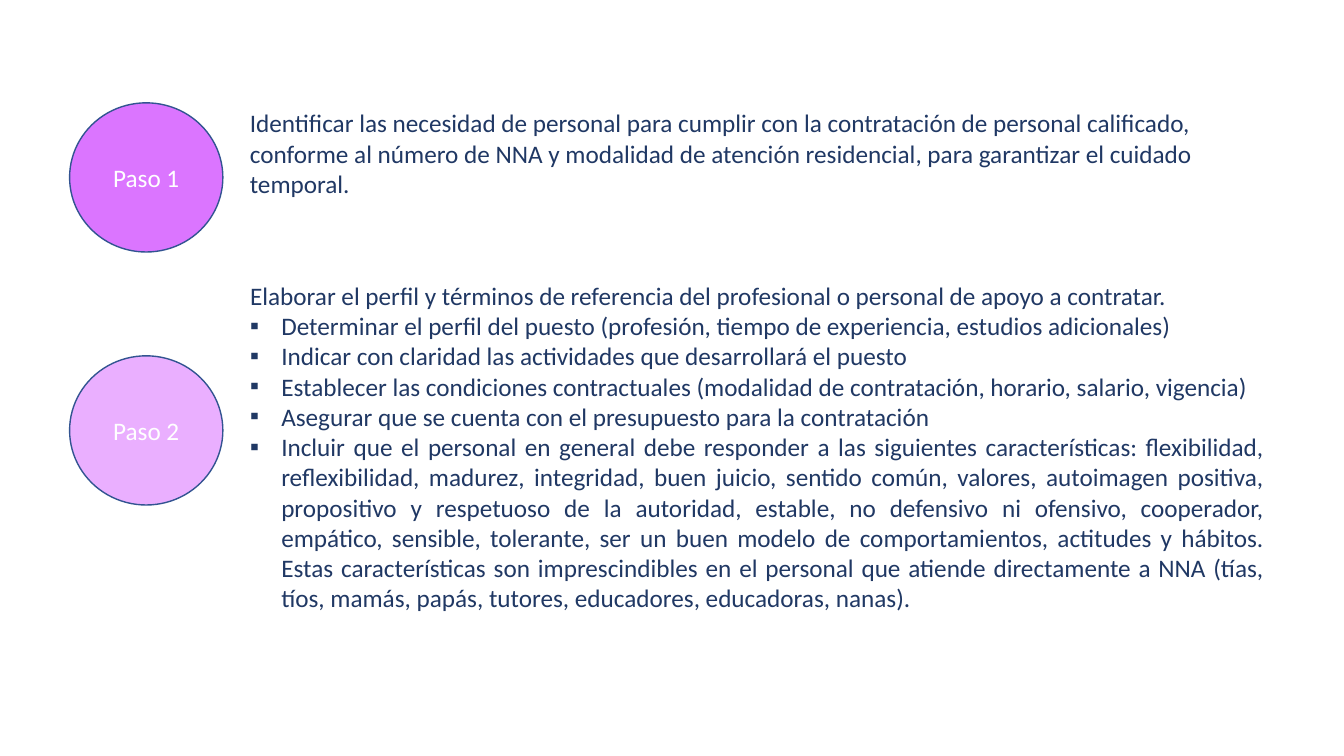
from lxml.etree import SubElement
from pptx import Presentation
from pptx.dml.color import RGBColor
from pptx.enum.shapes import MSO_SHAPE
from pptx.enum.text import MSO_ANCHOR, MSO_AUTO_SIZE, PP_ALIGN
from pptx.oxml.ns import qn
from pptx.util import Inches, Pt

NAVY = "203864"
TEXT_LEFT, TEXT_WIDTH = 2.38, 10.26
INDENT = 0.31

STEP_1 = ("Identificar las necesidad de personal para cumplir con la contratación de personal "
          "calificado, conforme al número de NNA y modalidad de atención residencial, para "
          "garantizar el cuidado temporal.")
STEP_2 = ("Elaborar el perfil y términos de referencia del profesional o personal de apoyo "
          "a contratar.")
STEP_2_TASKS = [
    "Determinar el perfil del puesto (profesión, tiempo de experiencia, estudios adicionales)",
    "Indicar con claridad las actividades que desarrollará el puesto",
    "Establecer las condiciones contractuales (modalidad de contratación, horario, salario, "
    "vigencia)",
    "Asegurar que se cuenta con el presupuesto para la contratación",
    "Incluir que el personal en general debe responder a las siguientes características: "
    "flexibilidad, reflexibilidad, madurez, integridad, buen juicio, sentido común, valores, "
    "autoimagen positiva, propositivo y respetuoso de la autoridad, estable, no defensivo ni "
    "ofensivo, cooperador, empático, sensible, tolerante, ser un buen modelo de "
    "comportamientos, actitudes y hábitos. Estas características son imprescindibles en el "
    "personal que atiende directamente a NNA (tías, tíos, mamás, papás, tutores, educadores, "
    "educadoras, nanas).",
]


def color(value):
    return RGBColor.from_string(value)


def set_bullet(para, symbol=None):
    """Set a hanging bullet, or clear the inherited one."""
    properties = para._p.get_or_add_pPr()
    indent = Inches(INDENT) if symbol else 0
    properties.set("marL", str(indent))
    properties.set("indent", str(-indent))
    if symbol:
        SubElement(properties, qn("a:buFont"), typeface="Calibri")
        SubElement(properties, qn("a:buChar"), char=symbol)
    else:
        SubElement(properties, qn("a:buNone"))


def format_text(para, text, text_color, align=PP_ALIGN.LEFT):
    para.text = text
    para.alignment = align
    para.space_before = Pt(0)
    para.font.name = "Calibri"
    para.font.size = Pt(18)
    para.font.color.rgb = color(text_color)


def add_step_circle(page, label, top, fill):
    circle = page.shapes.add_shape(
        MSO_SHAPE.OVAL, Inches(0.69), Inches(top), Inches(1.52), Inches(1.48))
    circle.shadow.inherit = False
    circle.fill.solid()
    circle.fill.fore_color.rgb = color(fill)
    circle.line.color.rgb = color("325491")
    circle.line.width = Pt(1)
    circle.text_frame.vertical_anchor = MSO_ANCHOR.MIDDLE
    format_text(circle.text_frame.paragraphs[0], label, "FFFFFF", PP_ALIGN.CENTER)


def add_description(page, text, top, height):
    box = page.shapes.add_textbox(
        Inches(TEXT_LEFT), Inches(top), Inches(TEXT_WIDTH), Inches(height))
    box.text_frame.word_wrap = True
    box.text_frame.auto_size = MSO_AUTO_SIZE.SHAPE_TO_FIT_TEXT
    format_text(box.text_frame.paragraphs[0], text, NAVY)


def fill_task_list(body, heading, tasks, top, height):
    body.left, body.top = Inches(TEXT_LEFT), Inches(top)
    body.width, body.height = Inches(TEXT_WIDTH), Inches(height)
    frame = body.text_frame
    frame.word_wrap = True
    frame.auto_size = MSO_AUTO_SIZE.SHAPE_TO_FIT_TEXT
    frame.vertical_anchor = MSO_ANCHOR.TOP
    para = frame.paragraphs[0]
    set_bullet(para)
    format_text(para, heading, NAVY)
    for task in tasks:
        para = frame.add_paragraph()
        set_bullet(para, "▪")
        format_text(para, task, NAVY, PP_ALIGN.JUSTIFY)


def main():
    deck = Presentation()
    deck.slide_width, deck.slide_height = Inches(13.33), Inches(7.5)
    page = deck.slides.add_slide(deck.slide_layouts[1])

    # The slide has no title
    title = page.shapes.title
    title.element.getparent().remove(title.element)

    # Step 1
    add_description(page, STEP_1, 1.02, 1.01)
    add_step_circle(page, "Paso 1", 1.02, "DB75FF")

    # Step 2
    add_step_circle(page, "Paso 2", 3.53, "EAAFFF")
    fill_task_list(page.placeholders[1], STEP_2, STEP_2_TASKS, 2.73, 3.74)

    deck.save("out.pptx")


if __name__ == "__main__":
    main()
